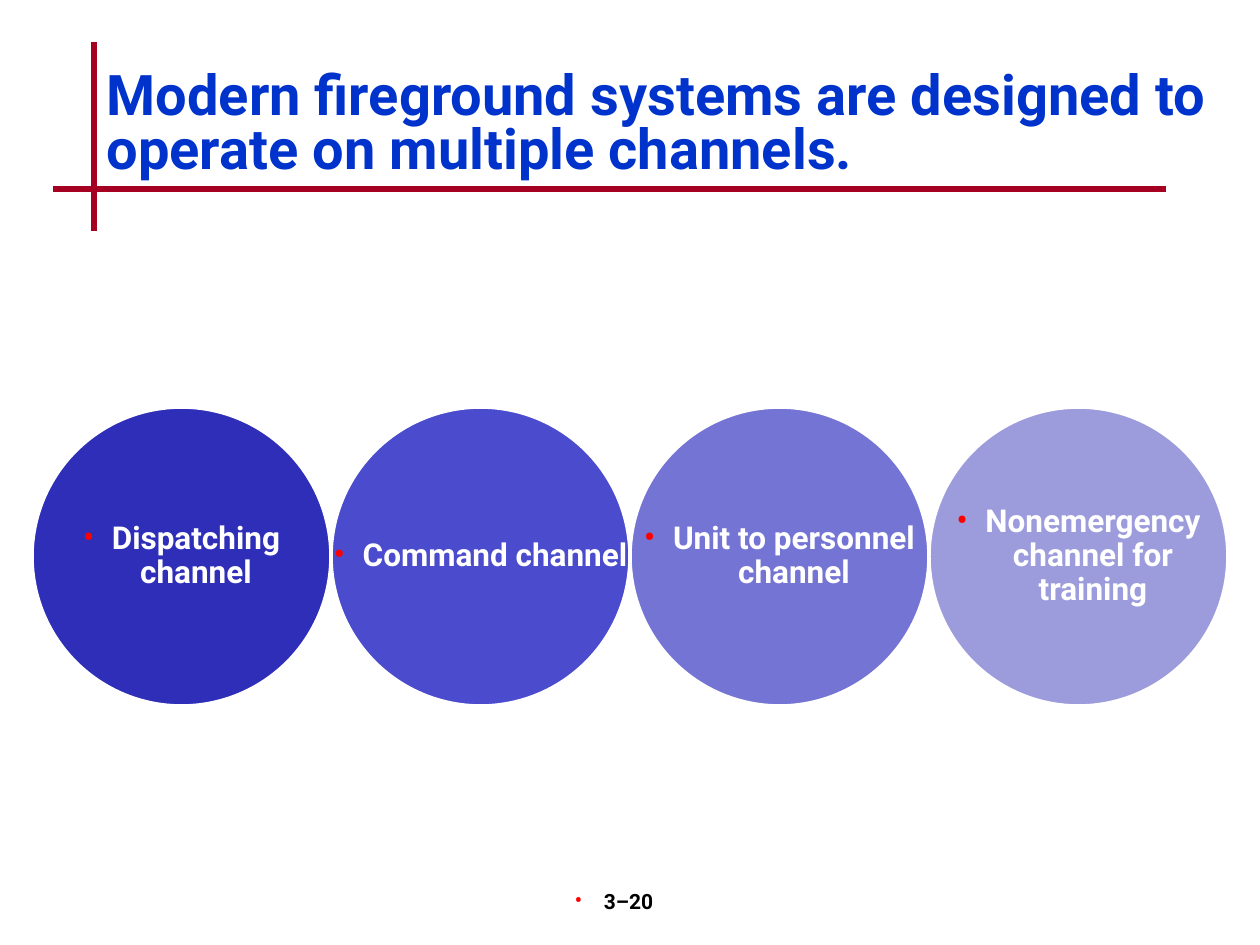
"""Build the slide on the channels of a modern fireground radio system."""
from lxml.etree import SubElement
from pptx import Presentation
from pptx.dml.color import RGBColor
from pptx.enum.shapes import MSO_CONNECTOR, MSO_SHAPE
from pptx.enum.text import MSO_ANCHOR, PP_ALIGN
from pptx.oxml.ns import qn
from pptx.util import Pt

SCALE = 914400 / 126
COLORS = {"title": "0033CC", "rule": "A50021", "bullet": "FF0000",
          "white": "FFFFFF", "black": "000000"}
CHANNELS = [("Dispatching channel", "2E2EB9"),
            ("Command channel", "4B4BCD"),
            ("Unit to personnel channel", "7474D4"),
            ("Nonemergency channel for training", "9C9CDD")]
DIAMETER = 299
INDENT = 29


def px(*lengths):
    return [round(length * SCALE) for length in lengths]


def bulleted_text(box, text, size, color, right=0):
    box.text_frame.word_wrap = True
    para = box.text_frame.paragraphs[0]
    para.text = text
    para.alignment = PP_ALIGN.CENTER
    para.font.name, para.font.size, para.font.bold = "Roboto", Pt(size), True
    para.font.color.rgb = RGBColor.from_string(COLORS[color])
    properties = para._p.get_or_add_pPr()
    indent, margin = px(INDENT, right)
    properties.set("marL", str(indent))
    properties.set("marR", str(margin))
    properties.set("indent", str(-indent))
    bullet_color = SubElement(properties, qn("a:buClr"))
    SubElement(bullet_color, qn("a:srgbClr"), val=COLORS["bullet"])
    SubElement(properties, qn("a:buSzPct"), val="110000")
    SubElement(properties, qn("a:buFont"), typeface="Roboto")
    SubElement(properties, qn("a:buChar"), char="•")
    defaults = properties.find(qn("a:defRPr"))
    if defaults is not None:
        properties.append(defaults)
    return para


deck = Presentation()
deck.slide_width, deck.slide_height = px(1260, 945)
page = deck.slides.add_slide(deck.slide_layouts[5])

for ends in [(94, 42, 94, 231), (53, 189, 1166, 189)]:
    rule = page.shapes.add_connector(MSO_CONNECTOR.STRAIGHT, *px(*ends))
    rule.line.color.rgb = RGBColor.from_string(COLORS["rule"])
    rule.line.width = Pt(3)
    SubElement(rule._element.spPr, qn("a:effectLst"))

title = page.shapes.title
title.left, title.top, title.width, title.height = px(94, 63, 1197, 126)
title.text_frame.text = "Modern fireground systems are designed to operate on multiple channels."
title.text_frame.vertical_anchor = MSO_ANCHOR.MIDDLE
heading = title.text_frame.paragraphs[0]
heading.alignment = PP_ALIGN.LEFT
heading.line_spacing = 0.8
heading.font.name, heading.font.size, heading.font.bold = "Roboto", Pt(32), True
heading.font.color.rgb = RGBColor.from_string(COLORS["title"])

number = page.shapes.add_textbox(*px(494, 882, 262, 63))
bulleted_text(number, "3–20", 12, "black", right=22)

for index, (channel, fill) in enumerate(CHANNELS):
    area = px(32 + index * DIAMETER, 407, DIAMETER, DIAMETER)
    circle = page.shapes.add_shape(MSO_SHAPE.OVAL, *area)
    circle.shadow.inherit = False
    circle.fill.solid()
    circle.fill.fore_color.rgb = RGBColor.from_string(fill)
    circle.line.color.rgb = RGBColor.from_string(COLORS["white"])
    circle.line.width = Pt(2)

    label = page.shapes.add_textbox(*area)
    frame = label.text_frame
    frame.margin_left = frame.margin_top = frame.margin_right = frame.margin_bottom = 0
    frame.vertical_anchor = MSO_ANCHOR.MIDDLE
    bulleted_text(label, channel, 18, "white").line_spacing = 0.9

deck.save("out.pptx")
